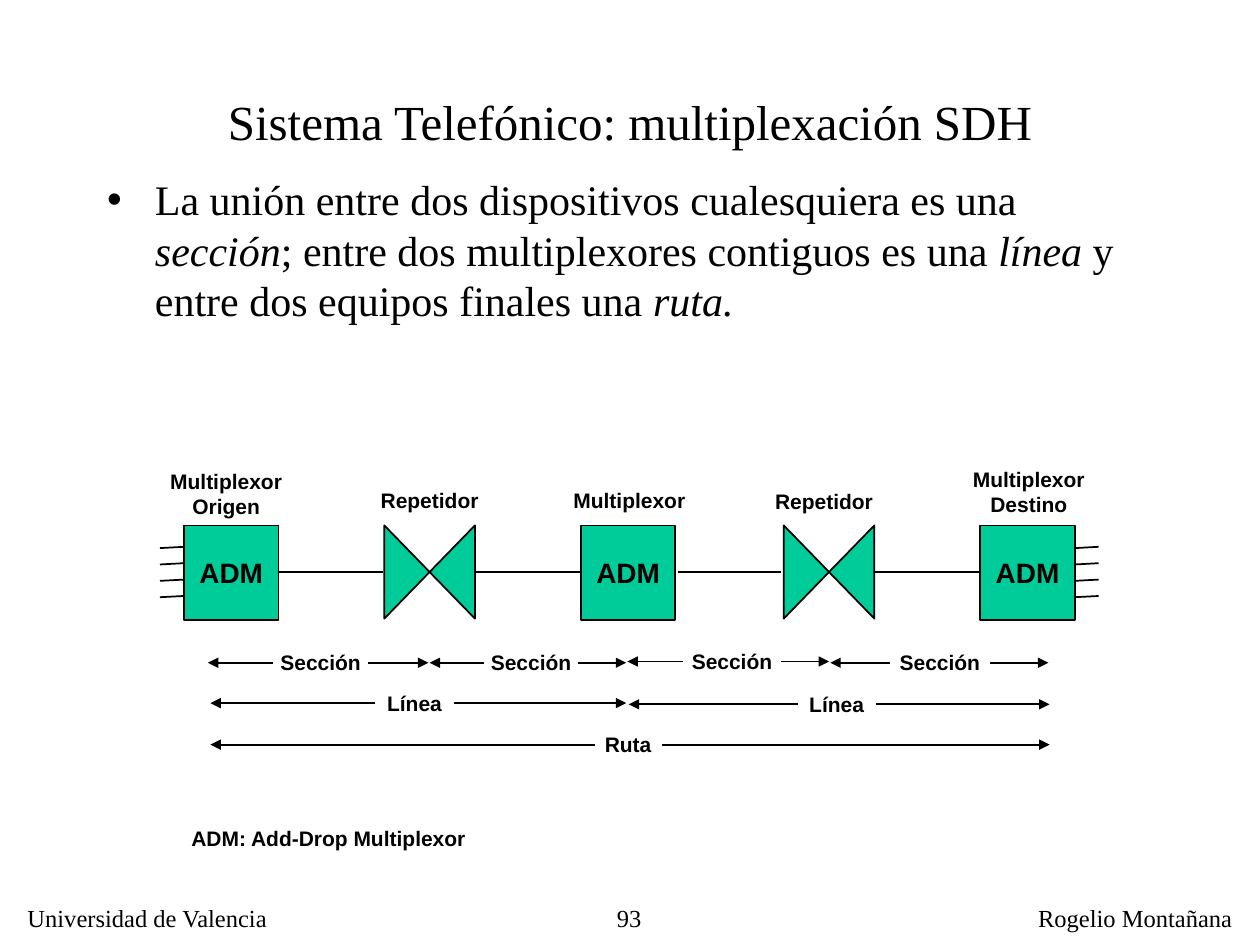
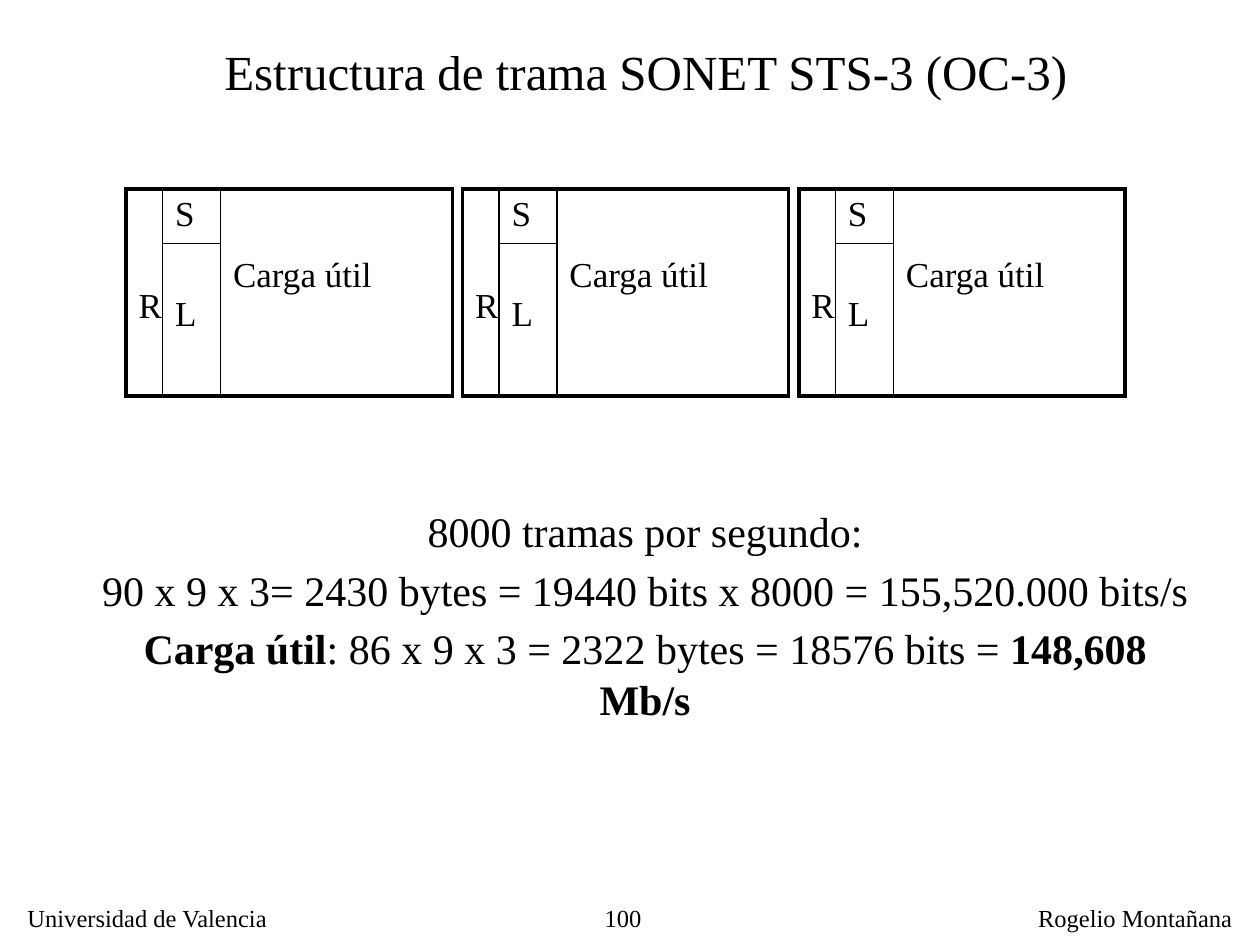
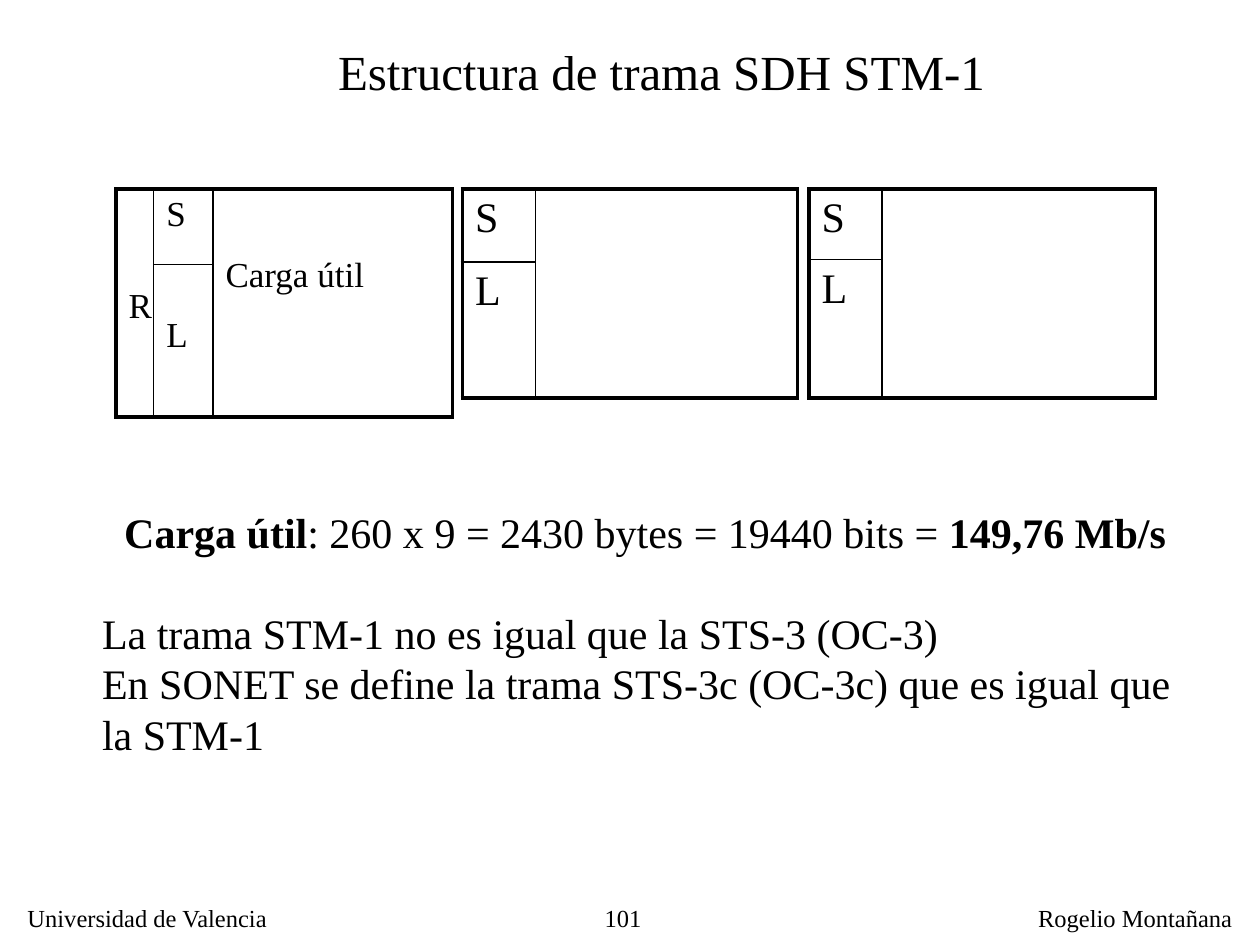
from lxml import etree
from pptx import Presentation
from pptx import util as u
from pptx.dml.color import RGBColor
from pptx.enum import shapes, text
from pptx.oxml.ns import qn

COLUMNS, ROWS = 10, 7.5
UNIT = u.Inches(1)
BLACK, GREEN = "000000", "00CC99"
SERIF, SANS = "Times New Roman", "Arial"
OUTER, INNER = 2.25, 1
LEFT, CENTER, RIGHT = text.PP_ALIGN.LEFT, text.PP_ALIGN.CENTER, text.PP_ALIGN.RIGHT


def grid(*cells):
    return [round(cell * UNIT) for cell in cells]


def color(hex_value):
    return RGBColor.from_string(hex_value)


def add_run(paragraph, words, size, font=SERIF, bold=False, italic=False):
    run = paragraph.add_run()
    run.text = words
    run.font.size = u.Pt(size)
    run.font.name = font
    run.font.bold = bold
    run.font.italic = italic
    run.font.color.rgb = color(BLACK)


def place(shape, box):
    shape.left, shape.top, shape.width, shape.height = grid(*box)


def add_lines(frame, lines, size, font=SERIF, bold=False, align=LEFT):
    for index, words in enumerate(lines):
        paragraph = frame.add_paragraph() if index else frame.paragraphs[0]
        paragraph.alignment = align
        add_run(paragraph, words, size, font, bold)


def add_label(slide, box, *lines, size=12, font=SANS, bold=True, align=CENTER):
    frame = slide.shapes.add_textbox(*grid(*box)).text_frame
    frame.word_wrap = False
    add_lines(frame, lines, size, font, bold, align)


def add_base(presentation, number, title, title_box):
    slide = presentation.slides.add_slide(presentation.slide_layouts[1])
    place(slide.shapes.title, title_box)
    frame = slide.shapes.title.text_frame
    frame.auto_size = text.MSO_AUTO_SIZE.NONE
    add_lines(frame, [title], 28, align=CENTER)
    footers = [(0.12, 2.13, "Universidad de Valencia", LEFT),
               (4.13, 1.06, str(number), RIGHT),
               (8.14, 1.74, "Rogelio Montañana", LEFT)]
    for left, width, words, align in footers:
        add_label(slide, (left, 7.12, width, 0.33), words,
                  size=14, font=SERIF, bold=False, align=align)
    return slide


def fill_body(slide, box, paragraphs, bullet=False):
    body = slide.placeholders[1]
    place(body, box)
    frame = body.text_frame
    frame.auto_size = text.MSO_AUTO_SIZE.NONE
    for index, (align, space, runs) in enumerate(paragraphs):
        paragraph = frame.add_paragraph() if index else frame.paragraphs[0]
        paragraph.alignment = align
        paragraph.space_before = u.Pt(space)
        properties = paragraph._p.get_or_add_pPr()
        indent = grid(0.38)[0] if bullet else 0
        properties.set("marL", str(indent))
        properties.set("indent", str(-indent))
        if bullet:
            etree.SubElement(properties, qn("a:buChar"), char="•")
        else:
            etree.SubElement(properties, qn("a:buNone"))
        for words, style in runs:
            add_run(paragraph, words, 24, bold=style == "bold", italic=style == "italic")


def add_line(slide, start, end, arrow=False):
    connector = slide.shapes.add_connector(
        shapes.MSO_CONNECTOR.STRAIGHT, *grid(*start, *end))
    connector.line.color.rgb = color(BLACK)
    connector.line.width = u.Pt(1)
    properties = connector._element.spPr
    if arrow:
        etree.SubElement(properties.find(qn("a:ln")), qn("a:tailEnd"), type="triangle")
    etree.SubElement(properties, qn("a:effectLst"))


def add_block(slide, kind, box, rotation=0):
    shape = slide.shapes.add_shape(kind, *grid(*box))
    shape.shadow.inherit = False
    shape.rotation = rotation
    shape.fill.solid()
    shape.fill.fore_color.rgb = color(GREEN)
    shape.line.color.rgb = color(BLACK)
    shape.line.width = u.Pt(1)
    return shape


def add_multiplexer(slide, left):
    shape = add_block(slide, shapes.MSO_SHAPE.RECTANGLE, (left, 4.17, 0.75, 0.75))
    frame = shape.text_frame
    frame.word_wrap = False
    frame.vertical_anchor = text.MSO_ANCHOR.MIDDLE
    add_lines(frame, ["ADM"], 16, SANS, True, CENTER)


def add_repeater(slide, center):
    for side, rotation in ((-1, 90), (1, 270)):
        left = center + side * 0.18 - 0.37
        add_block(slide, shapes.MSO_SHAPE.ISOSCELES_TRIANGLE,
                  (left, 4.36, 0.74, 0.36), rotation)


def add_span(slide, words, y, start, gap_start, gap_end, end):
    add_line(slide, (gap_start, y), (start, y), arrow=True)
    add_line(slide, (gap_end, y), (end, y), arrow=True)
    add_label(slide, (gap_start - 0.05, y - 0.15, gap_end - gap_start + 0.1, 0.3), words)


def set_borders(cell, widths):
    cell.fill.background()
    properties = cell._tc.get_or_add_tcPr()
    for index, (side, width) in enumerate(zip("LRTB", widths)):
        line = etree.Element(qn(f"a:ln{side}"), w=str(u.Pt(width)))
        fill = etree.SubElement(line, qn("a:solidFill"))
        etree.SubElement(fill, qn("a:srgbClr"), val=BLACK)
        properties.insert(index, line)


def add_frame_table(slide, left, columns, rows, merged, entries, size):
    box = grid(left, 1.5, sum(columns), sum(rows))
    table = slide.shapes.add_table(len(rows), len(columns), *box).table
    table.first_row = table.horz_banding = False
    for column, width in zip(table.columns, grid(*columns)):
        column.width = width
    for row, height in zip(table.rows, grid(*rows)):
        row.height = height
    last = len(columns) - 1
    for r in range(2):
        for c in range(len(columns)):
            set_borders(table.cell(r, c), (
                INNER if c else OUTER,
                OUTER if c == last else INNER,
                INNER if r and c not in merged else OUTER,
                OUTER if r or c in merged else INNER))
    for c in merged:
        table.cell(0, c).merge(table.cell(1, c))
    for r, c, words, top in entries:
        cell = table.cell(r, c)
        cell.margin_top = grid(top)[0]
        add_lines(cell.text_frame, [words], size)


def add_full_frame(slide, left, columns, rows):
    entries = [(0, 0, "R", 0.78), (0, 1, "S", 0.05),
               (0, 2, "Carga útil", 0.53), (1, 1, "L", 0.41)]
    add_frame_table(slide, left, columns, rows, (0, 2), entries, 20)


def add_short_frame(slide, left, columns, rows):
    entries = [(0, 0, "S", 0.05), (1, 0, "L", 0.05)]
    add_frame_table(slide, left, columns, rows, (1,), entries, 24)


def build_multiplexing(presentation):
    slide = add_base(presentation, 93, "Sistema Telefónico: multiplexación SDH",
                     (0.75, 0.67, 8.5, 0.58))
    fill_body(slide, (0.75, 1.33, 8.5, 1.5), [(LEFT, 0, [
        ("La unión entre dos dispositivos cualesquiera es una ", ""),
        ("sección", "italic"),
        ("; entre dos multiplexores contiguos es una ", ""),
        ("línea", "italic"),
        (" y entre dos equipos finales una ", ""),
        ("ruta.", "italic")])], bullet=True)
    for left in (1.46, 4.61, 7.78):
        add_multiplexer(slide, left)
    for center in (3.41, 6.58):
        add_repeater(slide, center)
    for left in (1.27, 8.53):
        for index in range(4):
            y = 4.35 + 0.13 * index
            add_line(slide, (left, y), (left + 0.19, y - 0.01))
    for start, end in ((2.21, 3.04), (3.76, 4.61), (5.38, 6.2), (6.93, 7.77)):
        add_line(slide, (start, 4.54), (end, 4.54))
    spans = [("Sección", 5.26, 1.65, 2.17, 2.92, 3.4),
             ("Sección", 5.26, 3.41, 3.84, 4.59, 4.97),
             ("Sección", 5.25, 4.98, 5.42, 6.2, 6.58),
             ("Sección", 5.26, 6.59, 7.06, 7.86, 8.32),
             ("Línea", 5.58, 1.67, 2.98, 3.6, 4.97),
             ("Línea", 5.59, 4.99, 6.33, 6.95, 8.33),
             ("Ruta", 5.91, 1.67, 4.72, 5.25, 8.33)]
    for span in spans:
        add_span(slide, *span)
    add_label(slide, (1.25, 3.67, 1.09, 0.5), "Multiplexor", "Origen")
    add_label(slide, (2.92, 3.82, 0.98, 0.3), "Repetidor")
    add_label(slide, (4.45, 3.82, 1.09, 0.3), "Multiplexor")
    add_label(slide, (6.05, 3.83, 0.98, 0.3), "Repetidor")
    add_label(slide, (7.62, 3.65, 1.09, 0.5), "Multiplexor", "Destino")
    add_label(slide, (1.42, 6.5, 2.39, 0.3), "ADM: Add-Drop Multiplexor", align=LEFT)


def build_sonet(presentation):
    slide = add_base(presentation, 100, "Estructura de trama SONET STS-3 (OC-3)",
                     (1.57, 0.28, 7.11, 0.57))
    for index in range(3):
        add_full_frame(slide, 1 + index * 2.67, (0.29, 0.46, 1.84), (0.43, 1.21))
    fill_body(slide, (0.71, 3.96, 8.82, 1.86), [
        (CENTER, 0, [("8000 tramas por segundo:", "")]),
        (CENTER, 4.8, [("90 x 9 x 3= 2430 bytes = 19440 bits x 8000 = 155,520.000 bits/s", "")]),
        (CENTER, 4.8, [("Carga útil", "bold"),
                       (": 86 x 9 x 3 = 2322 bytes = 18576 bits = ", ""),
                       ("148,608 Mb/s", "bold")])])


def build_sdh(presentation):
    slide = add_base(presentation, 101, "Estructura de trama SDH STM-1",
                     (2.48, 0.28, 5.54, 0.57))
    add_full_frame(slide, 0.92, (0.3, 0.47, 1.9), (0.6, 1.21))
    add_short_frame(slide, 3.67, (0.58, 2.08), (0.58, 1.08))
    add_short_frame(slide, 6.42, (0.58, 2.17), (0.56, 1.1))
    fill_body(slide, (0.71, 3.97, 8.82, 2.1), [
        (CENTER, 0, [("Carga útil", "bold"),
                     (": 260 x 9 = 2430 bytes = 19440 bits = ", ""),
                     ("149,76 Mb/s", "bold")]),
        (LEFT, 28.8, [("La trama STM-1 no es igual que la STS-3 (OC-3)", "")]),
        (LEFT, 0, [("En SONET se define la trama STS-3c (OC-3c) que es igual que la STM-1", "")])])


def main():
    presentation = Presentation()
    presentation.slide_width, presentation.slide_height = grid(COLUMNS, ROWS)
    build_multiplexing(presentation)
    build_sonet(presentation)
    build_sdh(presentation)
    presentation.save("out.pptx")


if __name__ == "__main__":
    main()
